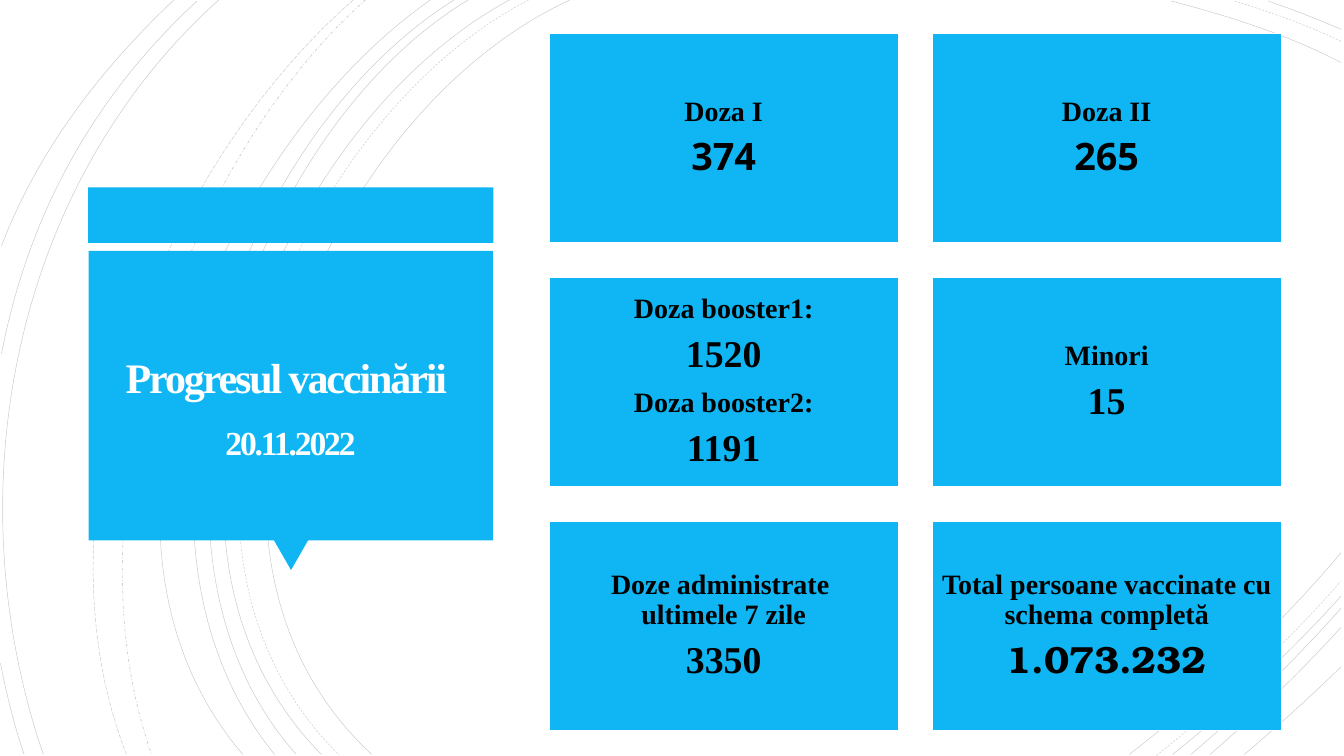
import pptx
import pptx.dml.color
import pptx.enum.dml
import pptx.enum.shapes
import pptx.enum.text
import pptx.oxml
import pptx.oxml.ns
import pptx.util

Inches = pptx.util.Inches
Pt = pptx.util.Pt
qn = pptx.oxml.ns.qn
SHAPE = pptx.enum.shapes.MSO_SHAPE
DASH = pptx.enum.dml.MSO_LINE
ALIGN = pptx.enum.text.PP_ALIGN
COLORS = {"ground": "FFFFFF", "panel": "10B6F4", "ink": "000000"}
SERIF = "Times New Roman"

SOLID_CURVES = [
    ((11.31, 0), (6.3, 2.3), (2.86, 10.8), (7.38, 14.97)),
    ((26.61, 1.24), (25.56, 0.69), (24.36, 0.31), (23.24, 0.02)),
    ((22.41, 14.97), (23.93, 13.79), (25.37, 12.44), (26.61, 10.97)),
    ((10.11, 0), (5.39, 2.55), (2.19, 10.74), (6.38, 14.97)),
    ((26.61, 0.58), (26.14, 0.38), (25.66, 0.19), (25.16, 0.02)),
    ((23.27, 14.97), (24.46, 14.01), (25.59, 12.96), (26.61, 11.83)),
    ((9.29, 0), (4.87, 2.66), (2.19, 10.82), (5.88, 14.97)),
    ((23.63, 14.97), (24.68, 14.08), (25.69, 13.11), (26.61, 12.07)),
    ((9.01, 0), (4.61, 2.75), (1.94, 10.67), (5.45, 14.97)),
    ((24.01, 14.97), (24.93, 14.18), (25.8, 13.34), (26.61, 12.45)),
    ((8.54, 0), (4.34, 2.93), (1.06, 10.58), (4.82, 14.97)),
    ((24.69, 14.97), (25.34, 14.42), (25.99, 13.84), (26.61, 13.23)),
    ((4.34, 0), (0.22, 3.7), (-0.91, 9.8), (0.86, 14.97)),
    ((3.91, 0.02), (1.85, 1.92), (0.56, 4.27), (0.03, 7.02)),
    ((0.01, 13.16), (0.13, 13.77), (0.28, 14.39), (0.48, 14.97)),
    ((3.45, 0), (1.99, 1.38), (0.75, 2.99), (0.03, 4.88)),
]
DASHED_CURVES = [
    ((10.49, 0), (5.69, 2.49), (2.45, 10.75), (6.72, 14.97)),
    ((26.61, 0.82), (25.94, 0.5), (25.21, 0.24), (24.5, 0.02)),
    ((22.95, 14.99), (24.25, 13.95), (25.5, 12.8), (26.6, 11.54)),
]
DASH_DOT_CURVE = ((7.25, 0), (3.52, 3.33), (1.31, 10.18), (3.01, 14.97))
LONG_DASH_CURVE = ((7.01, 0), (3.15, 3.38), (0.57, 9.98), (2.51, 14.97))

CARDS = [
    ([("Doza I", "374")], "Open Sans"),
    ([("Doza II", "265")], "Open Sans"),
    ([("Doza booster1:", "1520"), ("Doza booster2:", "1191")], SERIF),
    ([("Minori", "15")], SERIF),
    ([("Doze administrate \nultimele 7 zile", "3350")], SERIF),
    ([("Total persoane vaccinate cu schema completă", "1.073.232")], "TeX Gyre Bonum"),
]
CARD_LEFT, CARD_TOP = 10.9, 0.66
CARD_WIDTH, CARD_HEIGHT = 6.92, 4.15
COLUMN_STEP, ROW_STEP = 7.6, 4.84


def rgb(name):
    return pptx.dml.color.RGBColor.from_string(COLORS[name])


def element(tag, **attributes):
    node = pptx.oxml.parse_xml(f'<a:{tag} {pptx.oxml.ns.nsdecls("a")}/>')
    for name, value in attributes.items():
        node.set(name, value)
    return node


class SlidePainter:
    def __init__(self, slide):
        self.slide = slide
        slide.background.fill.solid()
        slide.background.fill.fore_color.rgb = rgb("ground")

    def curve(self, points, dash=DASH.SOLID, width=0.75):
        start, *others = [(Inches(x), Inches(y)) for x, y in points]
        builder = self.slide.shapes.build_freeform(*start)
        builder.add_line_segments(others, close=False)
        shape = builder.convert_to_shape()
        outline = shape.element.find(".//" + qn("a:path"))
        bend = element("cubicBezTo")
        for segment in outline.findall(qn("a:lnTo")):
            bend.append(segment[0])
            outline.remove(segment)
        outline.append(bend)
        shape.shadow.inherit = False
        shape.fill.background()
        shape.line.width = Pt(width)
        shape.line.color.rgb = rgb("ink")
        shape.line.dash_style = dash
        shape.element.find(".//" + qn("a:srgbClr")).append(element("alpha", val="20000"))

    def panel(self, kind, left, top, width, height, outlined=False):
        shape = self.slide.shapes.add_shape(
            kind, Inches(left), Inches(top), Inches(width), Inches(height))
        shape.shadow.inherit = False
        shape.fill.solid()
        shape.fill.fore_color.rgb = rgb("panel")
        if outlined:
            shape.line.color.rgb = rgb("ground")
            shape.line.width = Pt(1.25)
        else:
            shape.line.fill.background()
        return shape

    def frame(self, shape, inset):
        frame = shape.text_frame
        frame.word_wrap = True
        frame.auto_size = pptx.enum.text.MSO_AUTO_SIZE.NONE
        frame.vertical_anchor = pptx.enum.text.MSO_ANCHOR.MIDDLE
        frame.margin_left = frame.margin_right = Inches(inset)
        frame.margin_top = frame.margin_bottom = Inches(inset)
        return frame

    def span(self, para, text, size, font, color):
        span = para.add_run()
        span.text = text
        span.font.size = Pt(size)
        span.font.name = font
        span.font.bold = True
        span.font.color.rgb = rgb(color)
        return span

    def title(self, left, top, width, height, parts):
        box = self.slide.shapes.title
        box.left, box.top = Inches(left), Inches(top)
        box.width, box.height = Inches(width), Inches(height)
        box.element.getparent().append(box.element)
        para = self.frame(box, 0.25).paragraphs[0]
        para.alignment = ALIGN.CENTER
        para.line_spacing = 1.5
        for index, (text, size) in enumerate(parts):
            if index:
                para.add_line_break()
            properties = self.span(para, text, size, SERIF, "ground")._r.rPr
            properties.set("spc", "-300")
            properties.set("kern", "0")

    def card(self, left, top, entries, number_font):
        box = self.panel(SHAPE.RECTANGLE, left, top, CARD_WIDTH, CARD_HEIGHT, True)
        frame = self.frame(box, 0.17)
        lines = []
        for label, number in entries:
            lines += [(label, 40, SERIF), (number, 54, number_font)]
        for index, (text, size, font) in enumerate(lines):
            para = frame.add_paragraph() if index else frame.paragraphs[0]
            para.alignment = ALIGN.CENTER
            para.line_spacing = 0.9
            para.space_after = Pt(0)
            after = para._p.pPr.find(qn("a:spcAft"))
            after.remove(after[0])
            after.append(element("spcPct", val="35000"))
            for row, part in enumerate(text.split("\n")):
                if row:
                    para.add_line_break()
                self.span(para, part, size, font, "ink")


def main():
    deck = pptx.Presentation()
    deck.slide_width, deck.slide_height = Inches(26.67), Inches(15)
    painter = SlidePainter(deck.slides.add_slide(deck.slide_layouts[5]))

    for points in SOLID_CURVES:
        painter.curve(points)
    for points in DASHED_CURVES:
        painter.curve(points, DASH.DASH)
    painter.curve(DASH_DOT_CURVE, DASH.DASH_DOT, 1)
    painter.curve(LONG_DASH_CURVE, DASH.LONG_DASH)

    painter.panel(SHAPE.RECTANGLE, 1.75, 3.72, 8.04, 1.1)
    pointer = painter.panel(SHAPE.ISOSCELES_TRIANGLE, 5.43, 10.71, 0.69, 0.6)
    pointer.rotation = 180
    painter.panel(SHAPE.RECTANGLE, 1.76, 4.98, 8.02, 5.74)
    painter.title(1.94, 5.14, 7.65, 5.37,
                  [("Progresul vaccinării ", 60), ("20.11.2022", 48)])

    for index, (entries, number_font) in enumerate(CARDS):
        row, column = divmod(index, 2)
        painter.card(CARD_LEFT + column * COLUMN_STEP, CARD_TOP + row * ROW_STEP,
                     entries, number_font)

    deck.save("out.pptx")


if __name__ == "__main__":
    main()
